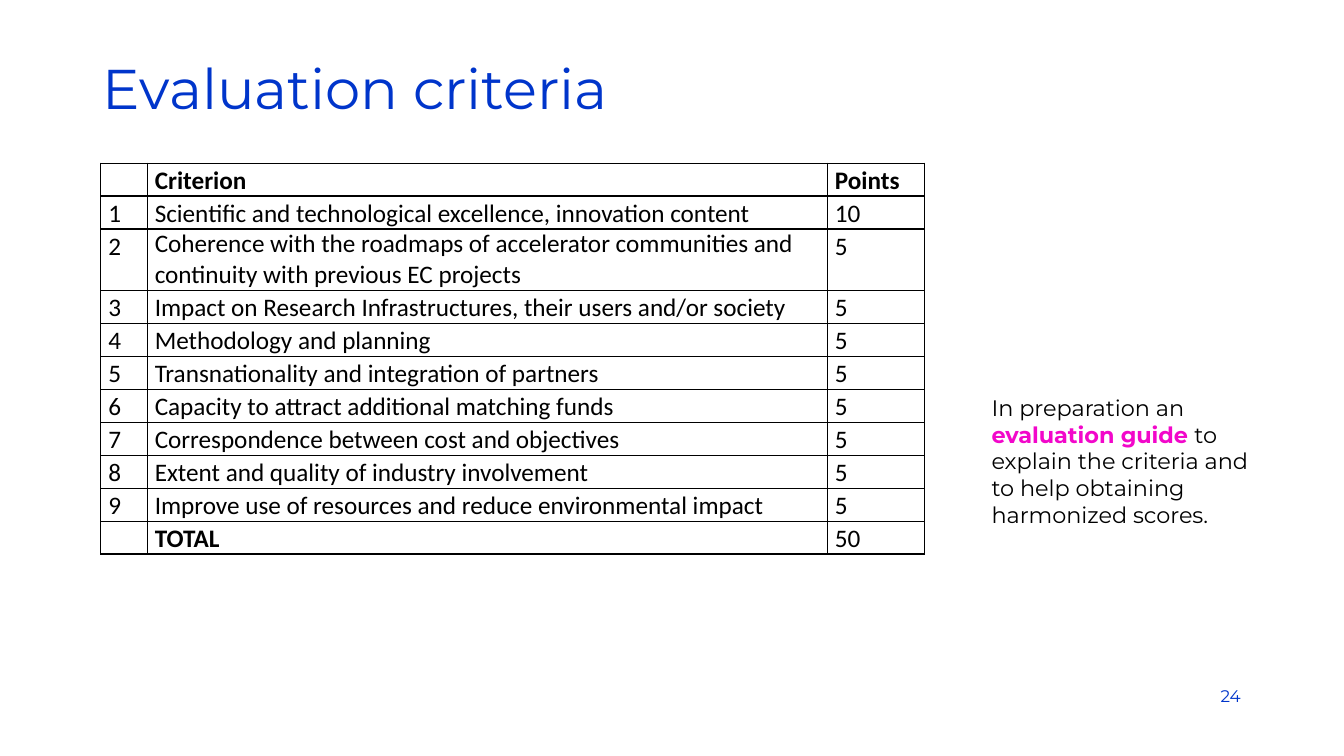
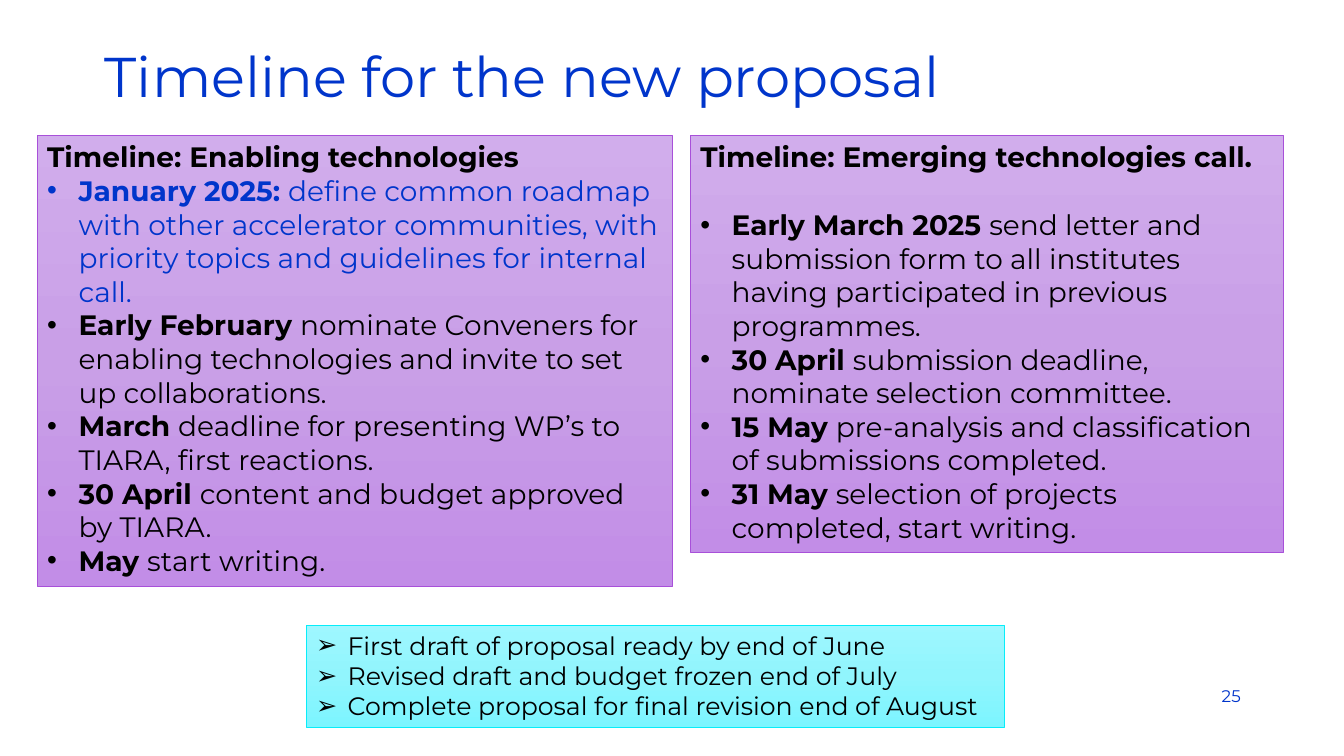
from copy import deepcopy
from dataclasses import dataclass

from lxml.etree import SubElement
from pptx import Presentation
from pptx.dml.color import RGBColor as Rgb
from pptx.enum.shapes import MSO_SHAPE as Preset
from pptx.enum.text import MSO_ANCHOR as Anchor, MSO_AUTO_SIZE as AutoSize, PP_ALIGN as Align
from pptx.oxml.ns import qn
from pptx.util import Cm, Pt


@dataclass(frozen=True)
class Theme:
    heading_font: str = "Montserrat"
    table_font: str = "Calibri"
    blue: str = "0035CB"
    black: str = "000000"
    magenta: str = "F207CA"
    purple: tuple = ("D1ADEC", "C99FE7", "C28DE7")
    purple_line: str = "A850D9"
    aqua: tuple = ("9EF7FF", "91F5FD", "7CF5FF")
    aqua_line: str = "08EDF9"
    title_size: int = 40
    timeline_size: int = 20
    body_size: int = 18
    note_size: int = 16
    number_size: int = 12


@dataclass(frozen=True)
class Box:
    """A region of the page, in centimetres."""
    left: float
    top: float
    width: float
    height: float

    def lengths(self):
        return Cm(self.left), Cm(self.top), Cm(self.width), Cm(self.height)


THEME = Theme()
INDENT = Cm(0.79)
NUMBER_BOX = Box(26.92, 17.02, 4.6, 1.02)

CRITERIA = [
    ("Scientific and technological excellence, innovation content", 10),
    ("Coherence with the roadmaps of accelerator communities and "
     "continuity with previous EC projects", 5),
    ("Impact on Research Infrastructures, their users and/or society", 5),
    ("Methodology and planning", 5),
    ("Transnationality and integration of partners", 5),
    ("Capacity to attract additional matching funds", 5),
    ("Correspondence between cost and objectives", 5),
    ("Extent and quality of industry involvement", 5),
    ("Improve use of resources and reduce environmental impact", 5),
]
WRAPPED_ROW = 2

ENABLING = [
    ("January 2025: ", "define common roadmap with other accelerator communities, "
     "with priority topics and guidelines for internal call."),
    ("Early February ", "nominate Conveners for enabling technologies "
     "and invite to set up collaborations."),
    ("March ", "deadline for presenting WP’s to TIARA, first reactions."),
    ("30 April ", "content and budget approved by TIARA."),
    ("May ", "start writing."),
]
EMERGING = [
    ("Early March 2025 ", "send letter and submission form to all institutes "
     "having participated in previous programmes."),
    ("30 April ", "submission deadline, nominate selection committee."),
    ("15 May ", "pre-analysis and classification of submissions completed."),
    ("31 May ", "selection of projects completed, start writing."),
]
MILESTONES = [
    "First draft of proposal ready by end of June",
    "Revised draft and budget frozen end of July",
    "Complete proposal for final revision end of August",
]


def add_span(para, text, size, color=THEME.black, bold=False, font=THEME.heading_font):
    span = para.add_run()
    span.text = text
    span.font.name = font
    span.font.size = Pt(size)
    span.font.bold = bold
    span.font.color.rgb = Rgb.from_string(color)


def add_bullet(para, symbol):
    properties = para._p.get_or_add_pPr()
    properties.set("marL", str(INDENT))
    properties.set("indent", str(-INDENT))
    SubElement(properties, qn("a:buFont"), typeface="Arial")
    SubElement(properties, qn("a:buChar"), char=symbol)


def prepare_frame(frame, anchor=Anchor.TOP):
    frame.word_wrap = True
    frame.auto_size = AutoSize.NONE
    frame.vertical_anchor = anchor


def add_text_box(page, box, anchor=Anchor.TOP):
    frame = page.shapes.add_textbox(*box.lengths()).text_frame
    prepare_frame(frame, anchor)
    return frame.paragraphs[0]


def add_page(deck, title, title_box, number):
    page = deck.slides.add_slide(deck.slide_layouts[5])
    holder = page.shapes.title
    holder.left, holder.top, holder.width, holder.height = title_box.lengths()
    prepare_frame(holder.text_frame, Anchor.MIDDLE)
    para = holder.text_frame.paragraphs[0]
    para.alignment = Align.LEFT
    para.line_spacing = 0.9
    add_span(para, title, THEME.title_size, THEME.blue)

    para = add_text_box(page, NUMBER_BOX, Anchor.MIDDLE)
    para.alignment = Align.RIGHT
    add_span(para, str(number), THEME.number_size, THEME.blue)
    return page


def add_gradient_panel(page, box, colors, line_color):
    """Draw a rectangle shaded from top to bottom and return its text frame."""
    panel = page.shapes.add_shape(Preset.RECTANGLE, *box.lengths())
    panel.shadow.inherit = False
    panel.line.color.rgb = Rgb.from_string(line_color)
    panel.line.width = Pt(0.5)
    panel.fill.gradient()
    panel.fill.gradient_angle = 270
    stop_list = panel._element.spPr.find(".//" + qn("a:gsLst"))
    stop_list.insert(1, deepcopy(stop_list[0]))
    for index, (stop, color) in enumerate(zip(panel.fill.gradient_stops, colors)):
        stop.position = index / (len(colors) - 1)
        stop.color.rgb = Rgb.from_string(color)
    prepare_frame(panel.text_frame)
    return panel.text_frame


def style_cell(cell):
    cell.margin_left = cell.margin_right = Cm(0.19)
    cell.margin_top = cell.margin_bottom = 0
    properties = cell._tc.get_or_add_tcPr()
    for side in ("a:lnL", "a:lnR", "a:lnT", "a:lnB"):
        border = SubElement(properties, qn(side), w=str(Pt(1)))
        fill = SubElement(border, qn("a:solidFill"))
        SubElement(fill, qn("a:srgbClr"), val=THEME.black)
    cell.fill.background()


def add_criteria_table(page, box):
    total = sum(points for _, points in CRITERIA)
    rows = [("", "Criterion", "Points")]
    rows += [(str(i), name, str(points)) for i, (name, points) in enumerate(CRITERIA, 1)]
    rows.append(("", "TOTAL", str(total)))

    table = page.shapes.add_table(len(rows), 3, *box.lengths()).table
    table.first_row = table.horz_banding = False
    number_width, points_width = 1.17, 2.44
    widths = (number_width, box.width - number_width - points_width, points_width)
    for column, width in zip(table.columns, widths):
        column.width = Cm(width)
    for i, values in enumerate(rows):
        table.rows[i].height = Cm(1.55 if i == WRAPPED_ROW else 0.83)
        for j, value in enumerate(values):
            cell = table.cell(i, j)
            style_cell(cell)
            para = cell.text_frame.paragraphs[0]
            if not value:
                para.font.size = Pt(THEME.body_size)
                continue
            para.line_spacing = 1.0 if (i, j) == (WRAPPED_ROW, 1) else 1.07
            para.space_after = Pt(8)
            add_span(para, value, THEME.body_size, font=THEME.table_font,
                     bold=i == 0 or value == "TOTAL")


def add_guide_note(page, box):
    para = add_text_box(page, box)
    add_span(para, "In preparation an ", THEME.note_size)
    add_span(para, "evaluation guide ", THEME.note_size, THEME.magenta, bold=True)
    add_span(para, "to explain the criteria and to help obtaining harmonized scores.",
             THEME.note_size)


def add_timeline(page, box, heading, steps, first_color=THEME.black, heading_gap=0):
    """Add a panel of dated steps; heading_gap is the space under its heading, in points."""
    frame = add_gradient_panel(page, box, THEME.purple, THEME.purple_line)
    para = frame.paragraphs[0]
    para.alignment = Align.LEFT
    para.space_after = Pt(heading_gap)
    add_span(para, heading, THEME.timeline_size, bold=True)
    for index, (date, task) in enumerate(steps):
        color = THEME.black if index else first_color
        para = frame.add_paragraph()
        add_bullet(para, "•")
        para.alignment = Align.LEFT
        add_span(para, date, THEME.timeline_size, color, bold=True)
        add_span(para, task, THEME.timeline_size, color)


def add_milestones(page, box):
    frame = add_gradient_panel(page, box, THEME.aqua, THEME.aqua_line)
    for index, milestone in enumerate(MILESTONES):
        para = frame.add_paragraph() if index else frame.paragraphs[0]
        add_bullet(para, "➢")
        para.alignment = Align.LEFT
        add_span(para, milestone, THEME.body_size)


def add_criteria_page(deck):
    page = add_page(deck, "Evaluation criteria", Box(2.34, 1.02, 22.6, 2.57), 24)
    add_criteria_table(page, Box(2.54, 4.11, 20.75, 9.85))
    add_guide_note(page, Box(24.74, 9.8, 7.19, 3.68))


def add_timeline_page(deck):
    page = add_page(deck, "Timeline for the new proposal", Box(2.39, 1.02, 24.56, 1.96), 25)
    add_timeline(page, Box(17.4, 3.4, 14.94, 10.52), "Timeline: Emerging technologies call.",
                 EMERGING, heading_gap=24.4)
    add_timeline(page, Box(0.94, 3.4, 16, 11.38), "Timeline: Enabling technologies",
                 ENABLING, first_color=THEME.blue)
    add_milestones(page, Box(7.72, 15.75, 17.6, 2.57))


def main():
    deck = Presentation()
    deck.slide_width, deck.slide_height = Cm(33.87), Cm(19.05)
    add_criteria_page(deck)
    add_timeline_page(deck)
    deck.save("out.pptx")


if __name__ == "__main__":
    main()
